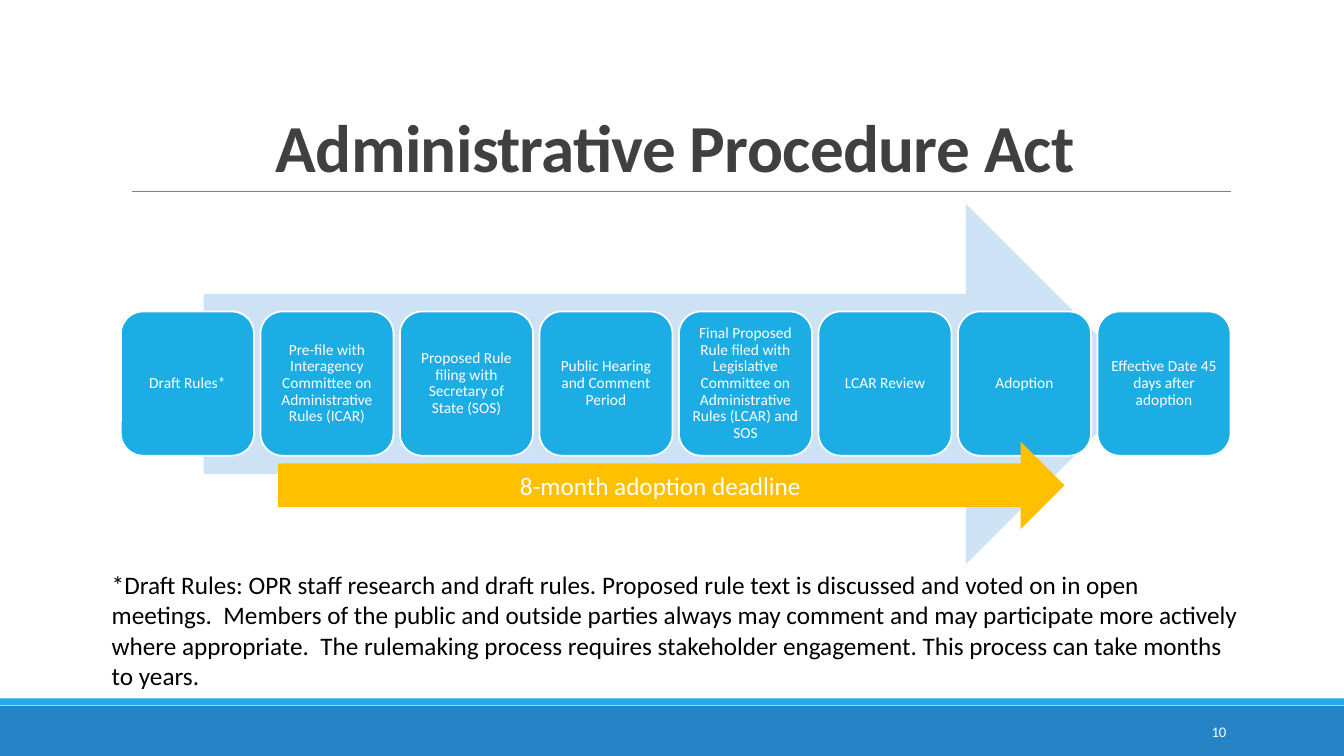
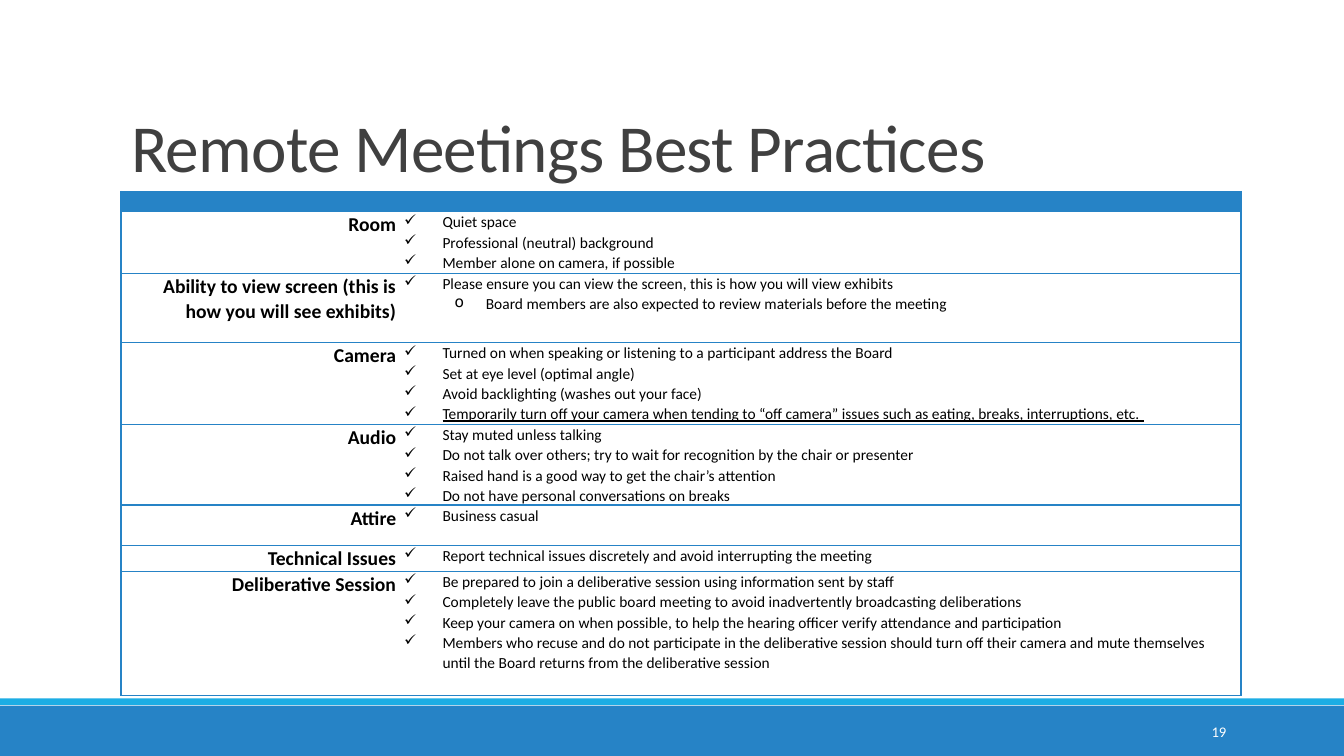
from lxml.etree import SubElement
from pptx import Presentation
from pptx.dml.color import RGBColor
from pptx.enum.shapes import MSO_CONNECTOR, MSO_SHAPE
from pptx.enum.text import MSO_ANCHOR as Anchor, PP_ALIGN as Align
from pptx.oxml.ns import qn
from pptx.util import Inches, Pt

COLORS = {
    "band": "2683C6", "accent": "1CADE4", "rule": "808080", "title": "404040",
    "pale": "CDE3F5", "deadline": "FFC000", "white": "FFFFFF", "black": "000000",
}
FONT = "Calibri"
TITLE_ONLY = 5

STEPS = [
    "Draft Rules*",
    "Pre-file with Interagency Committee on Administrative Rules (ICAR)",
    "Proposed Rule filing with Secretary of State (SOS)",
    "Public Hearing and Comment Period",
    "Final Proposed Rule filed with Legislative Committee on Administrative Rules (LCAR) and SOS",
    "LCAR Review",
    "Adoption",
    "Effective Date 45 days after adoption",
]
DRAFT_NOTE = (
    "*Draft Rules: OPR staff research and draft rules. Proposed rule text is discussed and voted on "
    "in open meetings.  Members of the public and outside parties always may comment and may "
    "participate more actively where appropriate.  The rulemaking process requires stakeholder "
    "engagement. This process can take months to years."
)

# Bullet styles: character, left margin and hanging indent in inches, underline
CHECK = ("✓", 0.38, 0.38, False)
CHECK_UNDERLINED = ("✓", 0.38, 0.38, True)
SUB_POINT = ("o", 0.81, 0.31, False)

# Row height in inches, label, points (a plain string is a CHECK point)
PRACTICES = [
    (0.61, "Room", [
        "Quiet space",
        "Professional (neutral) background",
        "Member alone on camera, if possible"]),
    (0.69, "Ability to view screen (this is how you will see exhibits)", [
        "Please ensure you can view the screen, this is how you will view exhibits",
        ("Board members are also expected to review materials before the meeting", SUB_POINT)]),
    (0.81, "Camera", [
        "Turned on when speaking or listening to a participant address the Board",
        "Set at eye level (optimal angle)",
        "Avoid backlighting (washes out your face)",
        ("Temporarily turn off your camera when tending to “off camera” issues such as eating, "
         "breaks, interruptions, etc. ", CHECK_UNDERLINED)]),
    (0.8, "Audio", [
        "Stay muted unless talking",
        "Do not talk over others; try to wait for recognition by the chair or presenter",
        "Raised hand is a good way to get the chair’s attention",
        "Do not have personal conversations on breaks"]),
    (0.4, "Attire", ["Business casual"]),
    (0.26, "Technical Issues", [
        "Report technical issues discretely and avoid interrupting the meeting"]),
    (1.23, "Deliberative Session", [
        "Be prepared to join a deliberative session using information sent by staff",
        "Completely leave the public board meeting to avoid inadvertently broadcasting deliberations",
        "Keep your camera on when possible, to help the hearing officer verify attendance and participation",
        "Members who recuse and do not participate in the deliberative session should turn off their "
        "camera and mute themselves until the Board returns from the deliberative session"]),
]


def color(name):
    return RGBColor.from_string(COLORS[name])


def apply(target, values):
    for name, value in values.items():
        setattr(target, name, value)


class Deck:
    """House style and current slide; boxes are (left, top, width, height) in percent."""

    def __init__(self):
        self.presentation = Presentation()
        apply(self.presentation, {"slide_width": Inches(13.33), "slide_height": Inches(7.5)})
        self.slide = None

    def x(self, share):
        return round(self.presentation.slide_width * share / 100)

    def y(self, share):
        return round(self.presentation.slide_height * share / 100)

    def box(self, left, top, width, height):
        return self.x(left), self.y(top), self.x(width), self.y(height)

    def new_slide(self, title, number, **title_style):
        layout = self.presentation.slide_layouts[TITLE_ONLY]
        self.slide = self.presentation.slides.add_slide(layout)
        self.shape(MSO_SHAPE.RECTANGLE, (0, 93.33, 100, 6.67), "band")
        self.shape(MSO_SHAPE.RECTANGLE, (0, 92.4, 100, 0.85), "accent")
        self.rule(9.83, 91.6, 25.33)
        self.title(title, **title_style)
        self.text_box(str(number), (81.25, 94.13, 10.73, 5.33), anchor=Anchor.MIDDLE,
                      size=10.5, ink="white", align=Align.RIGHT)

    def add_text(self, paragraph, text, size, ink="black", align=Align.LEFT, spacing=1.0,
                 bold=False, underline=False):
        apply(paragraph, {"alignment": align, "line_spacing": spacing})
        run = paragraph.add_run()
        run.text = text
        apply(run.font, {"name": FONT, "size": Pt(size), "bold": bold, "underline": underline})
        run.font.color.rgb = color(ink)
        return run

    def frame(self, shape, anchor, inset=None):
        frame = shape.text_frame
        apply(frame, {"word_wrap": True, "vertical_anchor": anchor})
        if inset is not None:
            sides = ("left", "top", "right", "bottom")
            apply(frame, {f"margin_{side}": Inches(inset) for side in sides})
        return frame

    def title(self, text, **style):
        shape = self.slide.shapes.title
        apply(shape, dict(zip(("left", "top", "width", "height"), self.box(9, 4.13, 82.5, 21.2))))
        frame = self.frame(shape, Anchor.BOTTOM)
        run = self.add_text(frame.paragraphs[0], text, 48, "title", spacing=0.85, **style)
        run._r.get_or_add_rPr().set("spc", "-50")

    def text_box(self, text, box, anchor=Anchor.TOP, **style):
        shape = self.slide.shapes.add_textbox(*self.box(*box))
        self.add_text(self.frame(shape, anchor).paragraphs[0], text, **style)

    def shape(self, preset, box, fill, outline=None, text=None, inset=None, **style):
        shape = self.slide.shapes.add_shape(preset, *self.box(*box))
        shape.shadow.inherit = False
        shape.fill.solid()
        shape.fill.fore_color.rgb = color(fill)
        if outline:
            shape.line.color.rgb = color(outline)
            shape.line.width = Pt(1.25)
        else:
            shape.line.fill.background()
        if text:
            frame = self.frame(shape, Anchor.MIDDLE, inset)
            self.add_text(frame.paragraphs[0], text, ink="white", align=Align.CENTER, **style)

    def rule(self, start, end, top):
        line = self.slide.shapes.add_connector(
            MSO_CONNECTOR.STRAIGHT, self.x(start), self.y(top), self.x(end), self.y(top))
        line.line.color.rgb = color("rule")
        line.line.width = Pt(0.5)
        SubElement(line._element.spPr, qn("a:effectLst"))

    def cell(self, cell, fill, outer_side):
        """Frame a cell on its top, bottom and outer side, then fill it."""
        properties = cell._tc.get_or_add_tcPr()
        for side in "LRTB":
            border = SubElement(properties, qn(f"a:ln{side}"), w=str(Pt(1)))
            if side in "TB" + outer_side:
                solid = SubElement(border, qn("a:solidFill"))
                SubElement(solid, qn("a:srgbClr"), val=COLORS["band"])
            else:
                SubElement(border, qn("a:noFill"))
        cell.fill.solid()
        cell.fill.fore_color.rgb = color(fill)
        apply(cell, {"margin_left": Inches(0.04), "margin_right": Inches(0.04),
                     "margin_top": 0, "margin_bottom": 0})

    def bullet(self, paragraph, text, style):
        character, margin, hanging, underline = style
        self.add_text(paragraph, text, 11, spacing=1.07, underline=underline)
        properties = paragraph._p.get_or_add_pPr()
        properties.set("marL", str(Inches(margin)))
        properties.set("indent", str(-Inches(hanging)))
        SubElement(properties, qn("a:buChar"), char=character)

    def checklist(self, rows, box, column_widths, header_height):
        table = self.slide.shapes.add_table(len(rows) + 1, 2, *self.box(*box)).table
        apply(table, {"first_row": False, "horz_banding": False})
        for column, width in zip(table.columns, column_widths):
            column.width = Inches(width)
        heights = [header_height] + [height for height, _, _ in rows]
        for index, (row, height) in enumerate(zip(table.rows, heights)):
            row.height = Inches(height)
            for cell, outer_side in zip(row.cells, "LR"):
                self.cell(cell, "white" if index else "band", outer_side)
                if index == 0:
                    paragraph = cell.text_frame.paragraphs[0]
                    SubElement(paragraph._p, qn("a:endParaRPr"), sz="1100")
        for index, (_, label, points) in enumerate(rows, start=1):
            label_frame = table.cell(index, 0).text_frame
            self.add_text(label_frame.paragraphs[0], label, 14, align=Align.RIGHT,
                          spacing=1.07, bold=True)
            frame = table.cell(index, 1).text_frame
            for position, point in enumerate(points):
                paragraph = frame.add_paragraph() if position else frame.paragraphs[0]
                text, style = (point, CHECK) if isinstance(point, str) else point
                self.bullet(paragraph, text, style)


def procedure_slide(deck):
    deck.new_slide("Administrative Procedure Act", 10, bold=True, align=Align.CENTER)
    deck.shape(MSO_SHAPE.RIGHT_ARROW, (15.15, 26.93, 70.14, 47.73), "pale")
    first_left, pitch = 9, 10.38
    for index, step in enumerate(STEPS):
        deck.shape(MSO_SHAPE.ROUNDED_RECTANGLE, (first_left + index * pitch, 41.2, 9.9, 19.07),
                   "accent", outline="white", text=step, inset=0.05, size=11, spacing=0.9)
    deck.shape(MSO_SHAPE.RIGHT_ARROW, (20.7, 58.4, 58.5, 11.6), "deadline",
               text="8-month adoption deadline", size=18)
    deck.text_box(DRAFT_NOTE, (7.58, 74.67, 85.45, 17.47), size=18)


def practices_slide(deck):
    deck.new_slide("Remote Meetings Best Practices", 19)
    deck.checklist(PRACTICES, (9, 25.33, 83.35, 66.8), (2.77, 8.34), 0.2)


def main():
    deck = Deck()
    procedure_slide(deck)
    practices_slide(deck)
    deck.presentation.save("out.pptx")


if __name__ == "__main__":
    main()
